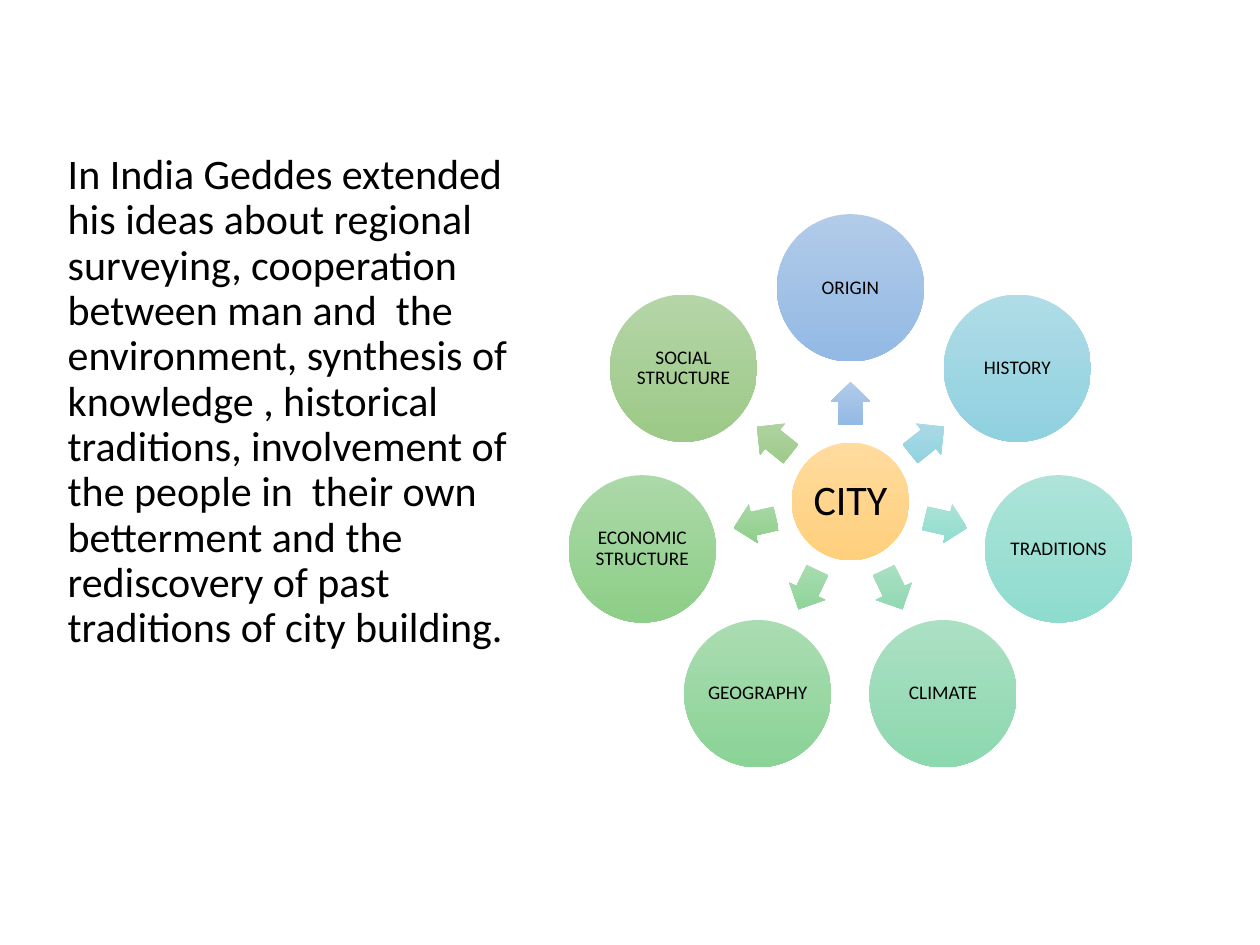
from math import cos, radians, sin
from pptx import Presentation
from pptx.dml.color import RGBColor
from pptx.enum.shapes import MSO_SHAPE
from pptx.enum.text import MSO_ANCHOR, PP_ALIGN
from pptx.oxml.ns import qn
from pptx.util import Pt

OVAL, ARROW = MSO_SHAPE.OVAL, MSO_SHAPE.RIGHT_ARROW
LEFT, CENTER = PP_ALIGN.LEFT, PP_ALIGN.CENTER
TOP, MIDDLE = MSO_ANCHOR.TOP, MSO_ANCHOR.MIDDLE

BODY = ("In India Geddes extended his ideas about regional surveying, "
        "cooperation between man and  the environment, synthesis of "
        "knowledge , historical traditions, involvement of the people in  "
        "their own betterment and the rediscovery of past traditions of "
        "city building.")
HUB = ("CITY", "FFDB9E", "FFD07C")
# Clockwise from the top: label, upper colour, lower colour
THEMES = [
    ("ORIGIN", "B1CBE9", "93B9E4"),
    ("HISTORY", "AFDCE6", "90D1E0"),
    ("TRADITIONS", "ADE3D9", "8EDCCE"),
    ("CLIMATE", "ABE0C3", "8CD8AF"),
    ("GEOGRAPHY", "AADCB2", "8AD396"),
    ("ECONOMIC STRUCTURE", "ABD9A8", "8DCE88"),
    ("SOCIAL STRUCTURE", "B5D5A7", "9CC987"),
]
MID_X, MID_Y = 486, 286.5
HUB_SIZE, DISC_SIZE = 67.2, 84.2
ARROW_W, ARROW_H = 24.8, 22.8
DISC_R, ARROW_R = 122, 56


def color(code):
    return RGBColor.from_string(code)


def write(shape, text, size=11, align=CENTER, anchor=MIDDLE, inset=0):
    frame = shape.text_frame
    frame.word_wrap = True
    frame.vertical_anchor = anchor
    frame.margin_left = frame.margin_right = Pt(inset)
    frame.margin_top = frame.margin_bottom = Pt(inset / 2)
    para = frame.paragraphs[0]
    para.alignment = align
    para.line_spacing = 0.9
    run = para.add_run()
    run.text = text
    run.font.name = "Calibri"
    run.font.size = Pt(size)
    run.font.color.rgb = color("000000")


def place(kind, x, y, wide, high, upper, lower):
    """Add a shape centred on x, y, shaded from upper to lower."""
    shape = slide.shapes.add_shape(
        kind, Pt(x - wide / 2), Pt(y - high / 2), Pt(wide), Pt(high))
    shape.shadow.inherit = False
    shape.line.fill.background()
    shape.fill.gradient()
    shape.fill.gradient_angle = 270
    for stop, code in zip(shape.fill.gradient_stops, (upper, lower)):
        stop.color.rgb = color(code)
    # Keep the shading upright when the shape turns
    shape.element.spPr.find(qn("a:gradFill")).set("rotWithShape", "0")
    return shape


def polar(radius, angle):
    turn = radians(angle)
    return MID_X + radius * cos(turn), MID_Y + radius * sin(turn)


deck = Presentation()
deck.slide_width, deck.slide_height = Pt(720), Pt(540)
slide = deck.slides.add_slide(deck.slide_layouts[6])

body = slide.shapes.add_textbox(Pt(31.6), Pt(84), Pt(286.6), Pt(356.4))
write(body, BODY, size=24, align=LEFT, anchor=TOP, inset=7.2)

name, upper, lower = HUB
hub = place(OVAL, MID_X, MID_Y, HUB_SIZE, HUB_SIZE, upper, lower)
write(hub, name, size=24)

for i, (name, upper, lower) in enumerate(THEMES):
    angle = 360 * i / len(THEMES) - 90
    arrow = place(ARROW, *polar(ARROW_R, angle), ARROW_W, ARROW_H, upper, lower)
    arrow.adjustments[0], arrow.adjustments[1] = 0.6, 0.5
    arrow.rotation = angle % 360
    disc = place(OVAL, *polar(DISC_R, angle), DISC_SIZE, DISC_SIZE, upper, lower)
    write(disc, name)

deck.save("out.pptx")
